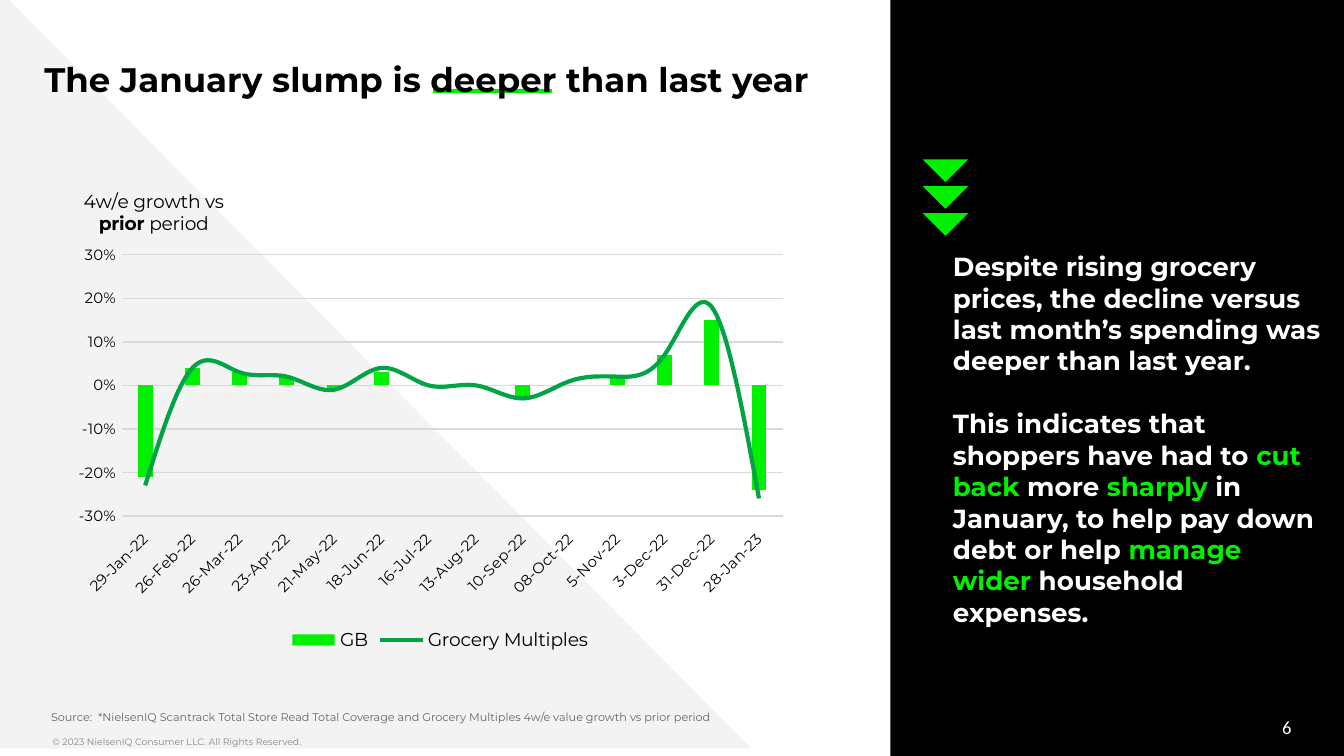
from lxml import etree
from pptx import Presentation
from pptx.chart.data import CategoryChartData
from pptx.dml.color import RGBColor
from pptx.enum.chart import (XL_CHART_TYPE, XL_LEGEND_POSITION, XL_MARKER_STYLE,
                             XL_TICK_LABEL_POSITION, XL_TICK_MARK)
from pptx.enum.shapes import MSO_CONNECTOR, MSO_SHAPE
from pptx.enum.text import MSO_ANCHOR, PP_ALIGN
from pptx.oxml.ns import qn
from pptx.util import Pt

PX = 4572  # 200 px to the inch
BLACK = RGBColor(0x00, 0x00, 0x00)
WHITE = RGBColor(0xFF, 0xFF, 0xFF)
PALE = RGBColor(0xF3, 0xF3, 0xF3)
GRID = RGBColor(0xD9, 0xD9, 0xD9)
SOURCE_GREY = RGBColor(0x66, 0x66, 0x66)
COPYRIGHT_GREY = RGBColor(0x88, 0x88, 0x88)
LIME = RGBColor(0x00, 0xF0, 0x00)
UNDERLINE_LIME = RGBColor(0x00, 0xEB, 0x00)
GREEN = RGBColor(0x00, 0xA3, 0x46)
RECTANGLE, RIGHT_TRIANGLE = MSO_SHAPE.RECTANGLE, MSO_SHAPE.RIGHT_TRIANGLE
TOP, MIDDLE, BOTTOM = MSO_ANCHOR.TOP, MSO_ANCHOR.MIDDLE, MSO_ANCHOR.BOTTOM
LEFT, RIGHT, CENTER = PP_ALIGN.LEFT, PP_ALIGN.RIGHT, PP_ALIGN.CENTER
NO_TICK = XL_TICK_MARK.NONE

DATES = ["29-Jan-22", "26-Feb-22", "26-Mar-22", "23-Apr-22", "21-May-22",
         "18-Jun-22", "16-Jul-22", "13-Aug-22", "10-Sep-22", "08-Oct-22",
         "5-Nov-22", "3-Dec-22", "31-Dec-22", "28-Jan-23"]
GROWTH = {
    "GB": [-0.21, 0.04, 0.03, 0.02, -0.01, 0.03, 0, 0,
           -0.03, 0, 0.02, 0.07, 0.15, -0.24],
    "Grocery Multiples": [-0.23, 0.04, 0.03, 0.02, -0.01, 0.04, 0, 0,
                          -0.03, 0.01, 0.02, 0.07, 0.18, -0.26],
}


def set_layout(parent, index, **places):
    """Place a chart part by fractions of the chart's size."""
    for old in parent.findall(qn("c:layout")):
        parent.remove(old)
    layout = etree.Element(qn("c:layout"))
    manual = etree.SubElement(layout, qn("c:manualLayout"))
    for tag, value in places.items():
        etree.SubElement(manual, qn(f"c:{tag}")).set("val", str(value))
    parent.insert(index, layout)


def move_last_series_to_line(chart):
    """Draw the last column series as a line on the same axes."""
    bars = chart.plots[0]._element
    series = bars.findall(qn("c:ser"))[-1]
    invert = series.find(qn("c:invertIfNegative"))
    if invert is not None:
        series.remove(invert)
    lines = etree.Element(qn("c:lineChart"))
    etree.SubElement(lines, qn("c:grouping")).set("val", "standard")
    etree.SubElement(lines, qn("c:varyColors")).set("val", "0")
    lines.append(series)
    etree.SubElement(lines, qn("c:marker")).set("val", "1")
    for axis in bars.findall(qn("c:axId")):
        etree.SubElement(lines, qn("c:axId")).set("val", axis.get("val"))
    bars.addnext(lines)


class SlideBuilder:
    font_name = "Montserrat"

    def __init__(self, slide):
        self.slide = slide

    def style(self, font, size, color, bold=False, name=None):
        font.name = name or self.font_name
        font.size = Pt(size)
        font.bold = bold
        font.color.rgb = color

    def shape(self, kind, x, y, w, h, color, rotation=0):
        shape = self.slide.shapes.add_shape(kind, x * PX, y * PX, w * PX, h * PX)
        shape.shadow.inherit = False
        shape.fill.solid()
        shape.fill.fore_color.rgb = color
        shape.line.fill.background()
        shape.rotation = rotation

    def line(self, x1, y1, x2, y2, color, width):
        line = self.slide.shapes.add_connector(
            MSO_CONNECTOR.STRAIGHT, x1 * PX, y1 * PX, x2 * PX, y2 * PX)
        line.line.color.rgb = color
        line.line.width = Pt(width)
        etree.SubElement(line._element.spPr, qn("a:effectLst"))

    def text(self, x, y, w, h, paragraphs, size, color, bold=False, name=None,
             pads=(10, 10), anchor=TOP, align=LEFT, gap=0):
        """Each paragraph is a list of (words, colour or None) pairs."""
        frame = self.slide.shapes.add_textbox(
            x * PX, y * PX, w * PX, h * PX).text_frame
        frame.word_wrap = True
        frame.margin_left = frame.margin_right = 0
        frame.margin_top, frame.margin_bottom = (pad * PX for pad in pads)
        frame.vertical_anchor = anchor
        for i, pieces in enumerate(paragraphs):
            paragraph = frame.add_paragraph() if i else frame.paragraphs[0]
            paragraph.alignment = align
            if i:
                paragraph.space_before = Pt(gap)
            for words, accent in pieces:
                run = paragraph.add_run()
                run.text = words
                self.style(run.font, size, accent or color, bold, name)

    def chart(self, x, y, w, h, categories, growth):
        data = CategoryChartData(number_format="0%")
        data.categories = categories
        for name, values in growth.items():
            data.add_series(name, values)
        chart = self.slide.shapes.add_chart(
            XL_CHART_TYPE.COLUMN_CLUSTERED, x * PX, y * PX, w * PX, h * PX, data).chart
        self.style(chart.font, 10, BLACK)
        chart.has_title = False
        chart.has_legend = True
        chart.legend.position = XL_LEGEND_POSITION.BOTTOM
        chart.legend.include_in_layout = False
        self.style(chart.legend.font, 10, BLACK)

        # Columns and smooth line
        move_last_series_to_line(chart)
        columns, lines = chart.plots
        columns.gap_width = 219
        columns.vary_by_categories = False
        gb, multiples = columns.series[0], lines.series[0]
        gb.invert_if_negative = False
        gb.format.fill.solid()
        gb.format.fill.fore_color.rgb = LIME
        multiples.format.line.color.rgb = GREEN
        multiples.format.line.width = Pt(2.25)
        multiples.marker.style = XL_MARKER_STYLE.NONE
        multiples.smooth = True

        # Axes
        dates, percent = chart.category_axis, chart.value_axis
        for axis in (dates, percent):
            axis.major_tick_mark = axis.minor_tick_mark = NO_TICK
            self.style(axis.tick_labels.font, 8, BLACK)
        dates.tick_label_position = XL_TICK_LABEL_POSITION.LOW
        dates._element.find(qn("c:txPr")).find(qn("a:bodyPr")).set("rot", "-2700000")
        percent.minimum_scale, percent.maximum_scale = -0.3, 0.3
        percent.major_unit = 0.1
        percent.tick_labels.number_format = "0%"
        percent.tick_labels.number_format_is_linked = False
        percent.format.line.fill.background()
        for rule in (dates.format.line, percent.major_gridlines.format.line):
            rule.color.rgb = GRID
            rule.width = Pt(0.75)

        # Axis title, upright above the plot
        frame = percent.axis_title.text_frame
        frame._txBody.find(qn("a:bodyPr")).set("rot", "0")
        first, second = frame.paragraphs[0], frame.add_paragraph()
        for paragraph, words, bold in ((first, "4w/e growth vs ", False),
                                       (second, "prior", True),
                                       (second, " period", False)):
            paragraph.alignment = CENTER
            run = paragraph.add_run()
            run.text = words
            self.style(run.font, 10, BLACK, bold)
        set_layout(percent.axis_title._element, 1,
                   xMode="edge", yMode="edge", x=0.02, y=0)
        set_layout(chart._chartSpace.chart.plotArea, 0, layoutTarget="inner",
                   xMode="edge", yMode="edge", x=0.076, y=0.151, w=0.88, h=0.552)


def main():
    deck = Presentation()
    deck.slide_width, deck.slide_height = 2000 * PX, 1125 * PX
    page = SlideBuilder(deck.slides.add_slide(deck.slide_layouts[6]))

    # Backdrop and footer
    page.shape(RECTANGLE, 1325, -4, 686, 1132, BLACK)
    page.shape(RIGHT_TRIANGLE, 0, -14, 1118, 1128, PALE)
    page.text(78, 1086, 1108, 40,
              [[("© 2023 NielsenIQ Consumer LLC. All Rights Reserved.", None)]],
              5, COPYRIGHT_GREY)
    page.text(1472, 1052, 450, 60, [[("6", None)]], 10, WHITE, name="Calibri",
              anchor=MIDDLE, align=RIGHT)

    # Growth chart
    page.chart(96, 273, 1118, 704, DATES, GROWTH)

    # Headline with its underline
    page.line(645, 136, 822, 136, UNDERLINE_LIME, 2)
    page.text(66, 67, 1274, 158,
              [[("The January slump is deeper than last year", None)]],
              18.2, BLACK, bold=True, pads=(20, 20))

    # Takeaway panel
    page.text(1418, 363, 550, 676, [
        [("Despite rising grocery prices, the decline versus last month’s "
          "spending was deeper than last year.", None)],
        [("This indicates that shoppers have had to ", None), ("cut back ", LIME),
         ("more ", None), ("sharply", LIME),
         (" in January, to help pay down debt or help ", None),
         ("manage wider ", LIME), ("household expenses.", None)],
    ], 14, WHITE, bold=True, gap=17)
    for row in range(3):
        page.shape(RIGHT_TRIANGLE, 1383, 213 + 40 * row, 48, 48, LIME, rotation=315)

    # Source
    page.text(76, 1056, 1214, 40,
              [[("Source:  *NielsenIQ Scantrack Total Store Read Total Coverage and "
                 "Grocery Multiples 4w/e value growth vs prior period", None)]],
              6, SOURCE_GREY, pads=(0, 19), anchor=BOTTOM)

    deck.save("out.pptx")


if __name__ == "__main__":
    main()
